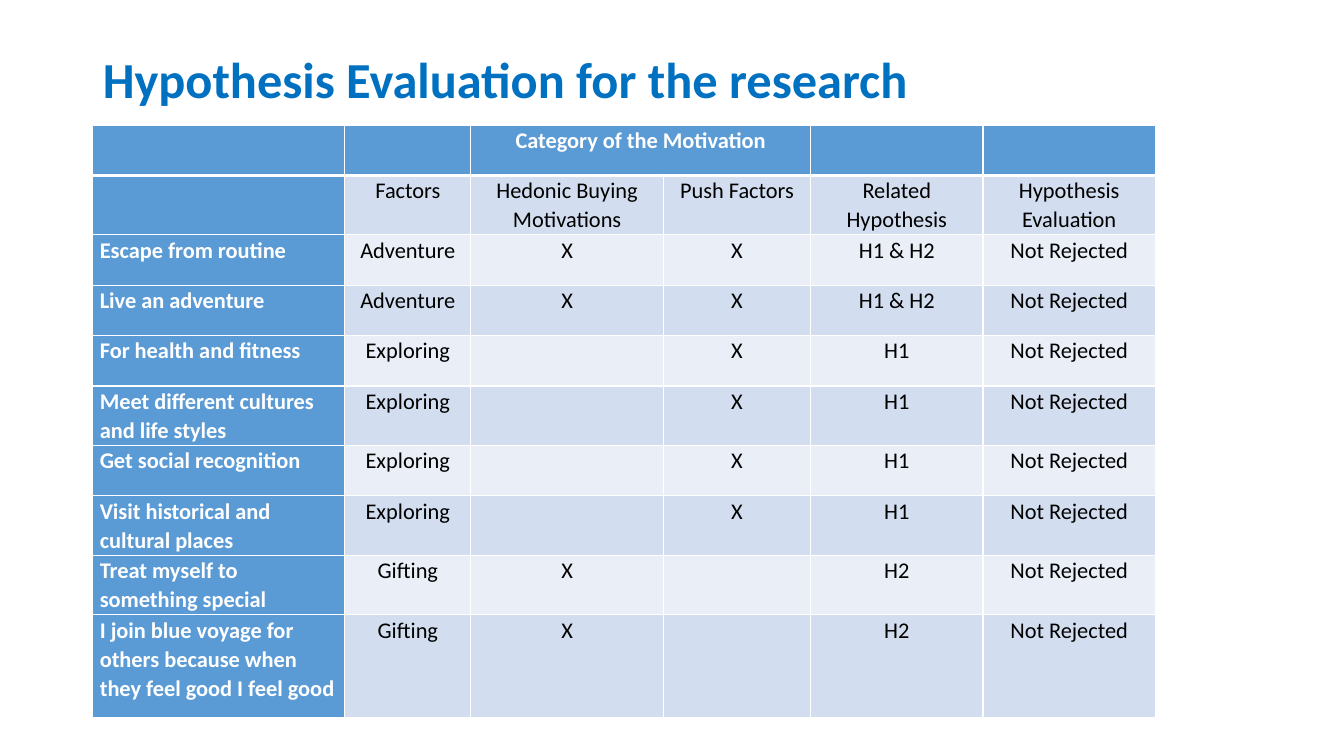
from dataclasses import dataclass

from lxml import etree
from pptx import Presentation
from pptx.dml.color import RGBColor
from pptx.enum import text
from pptx.oxml.ns import qn
from pptx.util import Inches, Pt

FONT = "Calibri"
TITLE_BLUE = RGBColor(0x00, 0x70, 0xC0)
HEADER_BLUE = RGBColor(0x5B, 0x9B, 0xD5)
DARK_BAND = RGBColor(0xD2, 0xDE, 0xEF)
LIGHT_BAND = RGBColor(0xEA, 0xEF, 0xF7)
WHITE = RGBColor(0xFF, 0xFF, 0xFF)
BLACK = RGBColor(0x00, 0x00, 0x00)

COLUMN_WIDTHS = (2.5, 1.25, 1.91, 1.46, 1.71, 1.71)
THIN, THICK = 1, 3


@dataclass(frozen=True)
class TableRow:
    cells: tuple[str, ...]
    height: float = 0.5


def motivation(reason: str, factor: str, hedonic: str, push: str,
               hypothesis: str, height: float = 0.5) -> TableRow:
    return TableRow((reason, factor, hedonic, push, hypothesis, "Not Rejected"), height)


ROWS = (
    TableRow(("", "", "Category of the Motivation", "", "", "")),
    TableRow(("", "Factors", "Hedonic Buying Motivations", "Push Factors",
              "Related Hypothesis", "Hypothesis Evaluation"), 0.59),
    motivation("Escape from routine", "Adventure", "X", "X", "H1 & H2"),
    motivation("Live an adventure", "Adventure", "X", "X", "H1 & H2"),
    motivation("For health and fitness", "Exploring", "", "X", "H1"),
    motivation("Meet different cultures and life styles", "Exploring", "", "X", "H1", 0.59),
    motivation("Get social recognition", "Exploring", "", "X", "H1"),
    motivation("Visit historical and cultural places", "Exploring", "", "X", "H1", 0.59),
    motivation("Treat myself to something special", "Gifting", "X", "", "H2", 0.59),
    motivation("I join blue voyage for others because when they feel good I feel good",
               "Gifting", "X", "", "H2", 1.02),
)


def add_run(paragraph, content: str, size: float, color: RGBColor, bold: bool) -> None:
    run = paragraph.add_run()
    run.text = content
    run.font.name = FONT
    run.font.size = Pt(size)
    run.font.bold = bold
    run.font.color.rgb = color


def add_borders(cell, top: float, bottom: float) -> None:
    """Draw white cell borders; call before filling, as lines precede the fill."""
    properties = cell._tc.get_or_add_tcPr()
    for side, width in (("L", THIN), ("R", THIN), ("T", top), ("B", bottom)):
        line = etree.SubElement(properties, qn(f"a:ln{side}"), w=str(Pt(width)))
        solid = etree.SubElement(line, qn("a:solidFill"))
        etree.SubElement(solid, qn("a:srgbClr"), val=str(WHITE))


def format_cell(cell, content: str, row: int, column: int) -> None:
    is_header = row == 0 or column == 0
    add_borders(cell, THICK if row == 1 else THIN, THICK if row == 0 else THIN)
    cell.fill.solid()
    band = DARK_BAND if row % 2 else LIGHT_BAND
    cell.fill.fore_color.rgb = HEADER_BLUE if is_header else band
    cell.margin_left = cell.margin_right = Inches(0.07)
    cell.margin_top = cell.margin_bottom = 0
    if content:
        paragraph = cell.text_frame.paragraphs[0]
        paragraph.line_spacing = 1.07
        paragraph.alignment = text.PP_ALIGN.CENTER if column else text.PP_ALIGN.LEFT
        add_run(paragraph, content, 16, WHITE if is_header else BLACK, is_header)


def add_title(slide) -> None:
    title = slide.shapes.title
    title.left, title.top = Inches(0.92), Inches(0.4)
    title.width, title.height = Inches(11.5), Inches(0.84)
    frame = title.text_frame
    frame.auto_size = text.MSO_AUTO_SIZE.NONE
    frame.vertical_anchor = text.MSO_ANCHOR.MIDDLE
    paragraph = frame.paragraphs[0]
    paragraph.alignment = text.PP_ALIGN.LEFT
    paragraph.line_spacing = 0.9
    add_run(paragraph, "Hypothesis Evaluation for the research", 36, TITLE_BLUE, True)


def add_hypothesis_table(slide) -> None:
    table = slide.shapes.add_table(
        len(ROWS), len(COLUMN_WIDTHS), Inches(0.92), Inches(1.24),
        Inches(sum(COLUMN_WIDTHS)), Inches(sum(row.height for row in ROWS))).table
    for column, width in zip(table.columns, COLUMN_WIDTHS):
        column.width = Inches(width)
    for row_index, row in enumerate(ROWS):
        table.rows[row_index].height = Inches(row.height)
        for column_index, content in enumerate(row.cells):
            format_cell(table.cell(row_index, column_index), content, row_index, column_index)
    table.cell(0, 2).merge(table.cell(0, 3))


def main() -> None:
    presentation = Presentation()
    presentation.slide_width, presentation.slide_height = Inches(13.33), Inches(7.5)
    slide = presentation.slides.add_slide(presentation.slide_layouts.get_by_name("Title Only"))
    add_title(slide)
    add_hypothesis_table(slide)
    presentation.save("out.pptx")


if __name__ == "__main__":
    main()
